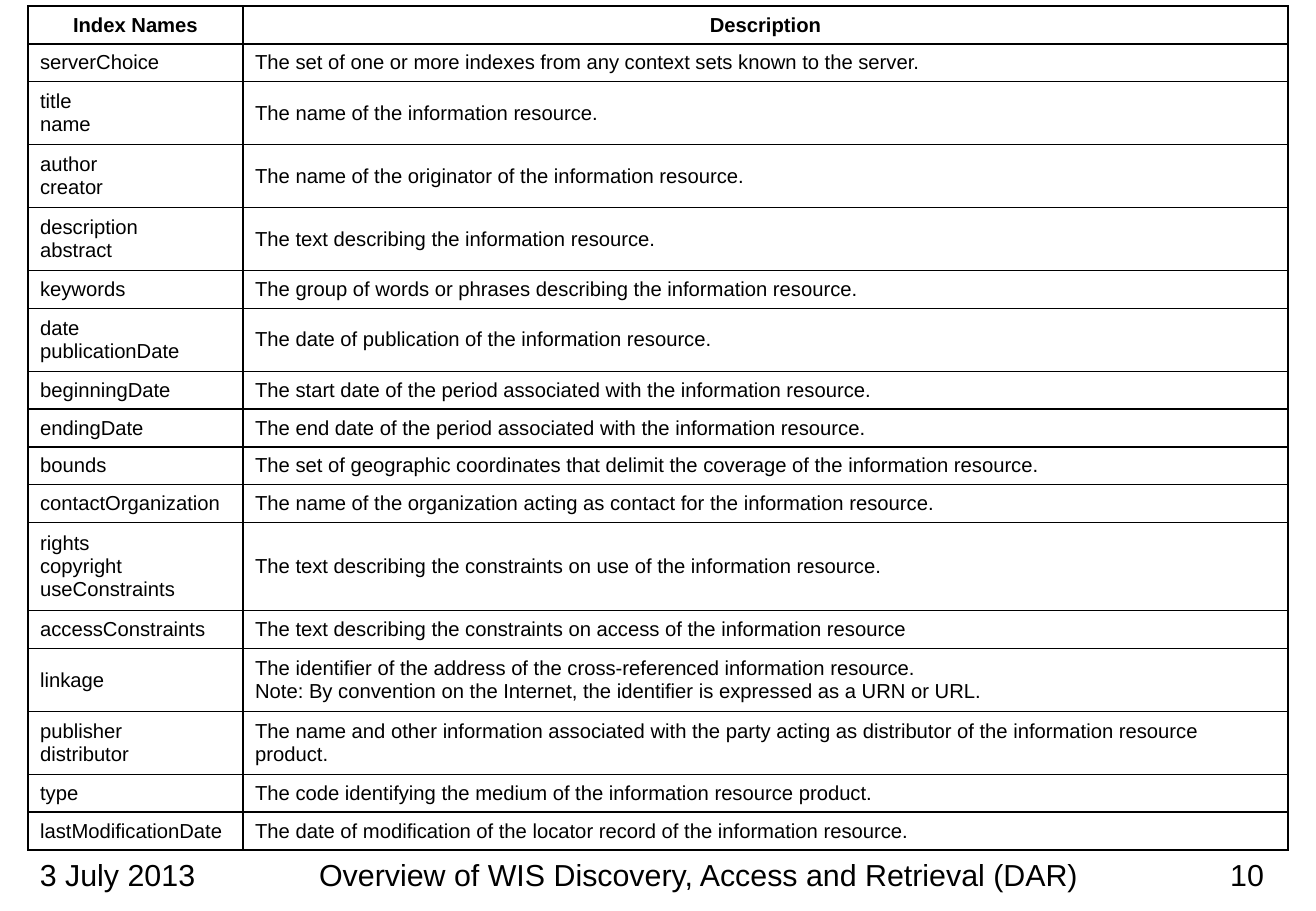
from dataclasses import dataclass

from lxml import etree
from pptx import Presentation
from pptx.dml.color import RGBColor
from pptx.enum.text import MSO_ANCHOR, PP_ALIGN
from pptx.oxml.ns import qn
from pptx.util import Inches, Pt

LEFT = PP_ALIGN.LEFT
CENTER = PP_ALIGN.CENTER
RIGHT = PP_ALIGN.RIGHT
MIDDLE = MSO_ANCHOR.MIDDLE


@dataclass(frozen=True)
class Theme:
    font: str = "Arial"
    ink: str = "000000"
    paper: str = "FFFFFF"
    table_size: int = 12
    footer_size: int = 18
    border_width: int = 1


THEME = Theme()
SLIDE_WIDTH, SLIDE_HEIGHT = 10.83, 7.5
MARGIN = 0.23
TABLE_TOP, TABLE_HEIGHT = 0.05, 6.95
COLUMN_WIDTHS = (1.77, 8.6)
FOOTER_TOP = 7
FOOTER_HEIGHT = SLIDE_HEIGHT - FOOTER_TOP

HEADINGS = ("Index Names", "Description")
INDEXES = (
    ("serverChoice", "The set of one or more indexes from any context sets known to the server."),
    ("title\vname", "The name of the information resource."),
    ("author\vcreator", "The name of the originator of the information resource."),
    ("description\vabstract", "The text describing the information resource."),
    ("keywords", "The group of words or phrases describing the information resource."),
    ("date\vpublicationDate", "The date of publication of the information resource."),
    ("beginningDate", "The start date of the period associated with the information resource."),
    ("endingDate", "The end date of the period associated with the information resource."),
    ("bounds", "The set of geographic coordinates that delimit the coverage of the information resource."),
    ("contactOrganization", "The name of the organization acting as contact for the information resource."),
    ("rights\vcopyright\vuseConstraints",
     "The text describing the constraints on use of the information resource."),
    ("accessConstraints", "The text describing the constraints on access of the information resource"),
    ("linkage",
     "The identifier of the address of the cross-referenced information resource. \v"
     "Note: By convention on the Internet, the identifier is expressed as a URN or URL."),
    ("publisher\vdistributor",
     "The name and other information associated with the party acting as distributor "
     "of the information resource product."),
    ("type", "The code identifying the medium of the information resource product."),
    ("lastModificationDate", "The date of modification of the locator record of the information resource."),
)
FOOTERS = (
    ("3 July 2013", MARGIN, 1.84, LEFT),
    ("Overview of WIS Discovery, Access and Retrieval (DAR) ", 2.12, 7.33, CENTER),
    ("10", 9.54, 0.96, RIGHT),
)


def write_text(text_frame, text, size, alignment, bold=False):
    text_frame.text = text
    for paragraph in text_frame.paragraphs:
        paragraph.alignment = alignment
        for run in paragraph.runs:
            run.font.name = THEME.font
            run.font.size = Pt(size)
            run.font.bold = bold
            run.font.color.rgb = RGBColor.from_string(THEME.ink)


def add_borders(cell):
    properties = cell._tc.get_or_add_tcPr()
    for position, side in enumerate(("lnL", "lnR", "lnT", "lnB")):
        line = etree.Element(qn(f"a:{side}"), w=str(Pt(THEME.border_width)))
        fill = etree.SubElement(line, qn("a:solidFill"))
        etree.SubElement(fill, qn("a:srgbClr"), val=THEME.ink)
        properties.insert(position, line)


def fill_cell(cell, text, is_heading):
    alignment = CENTER if is_heading else LEFT
    write_text(cell.text_frame, text, THEME.table_size, alignment, is_heading)
    cell.vertical_anchor = MIDDLE
    cell.fill.solid()
    cell.fill.fore_color.rgb = RGBColor.from_string(THEME.paper)
    add_borders(cell)


def row_units(row):
    line_count = max(text.count("\v") for text in row) + 1
    return 2 * line_count + 1


def add_index_table(slide):
    rows = (HEADINGS, *INDEXES)
    unit = TABLE_HEIGHT / sum(map(row_units, rows))
    frame = slide.shapes.add_table(
        len(rows), len(HEADINGS), Inches(MARGIN), Inches(TABLE_TOP),
        Inches(sum(COLUMN_WIDTHS)), Inches(TABLE_HEIGHT))
    table = frame.table
    table.first_row = False
    table.horz_banding = False
    for column, width in zip(table.columns, COLUMN_WIDTHS):
        column.width = Inches(width)
    for row_number, row in enumerate(rows):
        table.rows[row_number].height = Inches(unit * row_units(row))
        for column_number, text in enumerate(row):
            fill_cell(table.cell(row_number, column_number), text, row_number == 0)


def add_footer(slide, text, left, width, alignment):
    shape = slide.shapes.add_textbox(
        Inches(left), Inches(FOOTER_TOP), Inches(width), Inches(FOOTER_HEIGHT))
    shape.text_frame.word_wrap = True
    write_text(shape.text_frame, text, THEME.footer_size, alignment)


def main():
    presentation = Presentation()
    presentation.slide_width = Inches(SLIDE_WIDTH)
    presentation.slide_height = Inches(SLIDE_HEIGHT)
    slide = presentation.slides.add_slide(presentation.slide_layouts[6])
    for footer in FOOTERS:
        add_footer(slide, *footer)
    add_index_table(slide)
    presentation.save("out.pptx")


if __name__ == "__main__":
    main()
